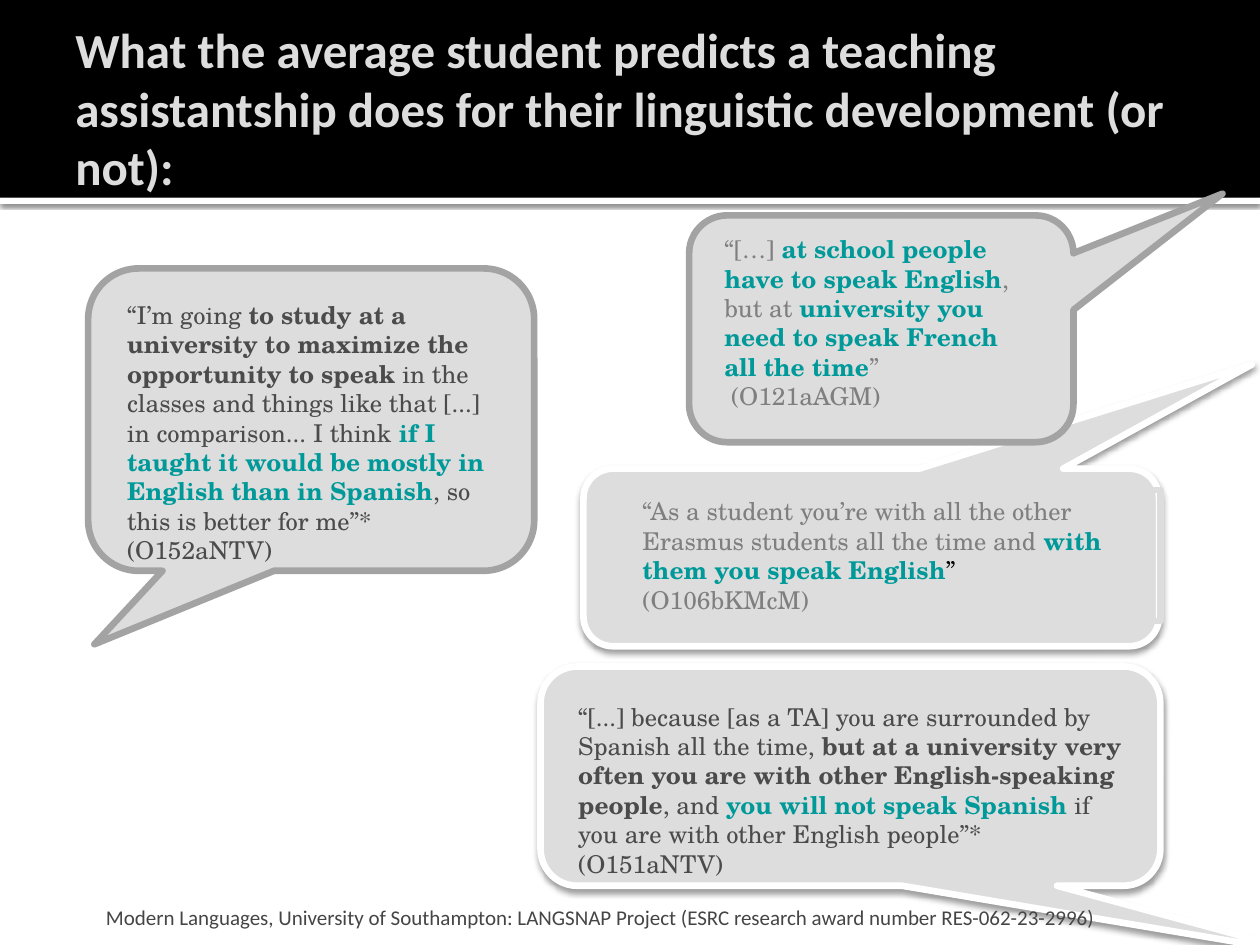
import pptx
import pptx.util
import pptx.dml.color
import pptx.enum.shapes
import pptx.enum.text
import pptx.oxml
import pptx.oxml.ns

Pt = pptx.util.Pt
KINDS = pptx.enum.shapes.MSO_SHAPE
ANCHOR = pptx.enum.text.MSO_ANCHOR

THEME = {
    "white": "FFFFFF", "black": "000000", "pale": "DDDDDD", "edge": "A3A3A3",
    "dark": "4B4B4B", "grey": "7F7F7F", "teal": "009999", "foot": "454545",
    "sans": "Calibri", "serif": "TeX Gyre Schola",
    "title": 28, "quote": 14, "note": 12, "line": 3.8,
}

TITLE = ("What the average student predicts a teaching assistantship does "
         "for their linguistic development (or not):")
FOOTER = ("Modern Languages, University of Southampton: LANGSNAP Project "
          "(ESRC research award number RES-062-23-2996)")

# Boxes are left, top, width, height in points.
# Each run is text, colour and, where bold, True.
QUOTES = [
    {"bubble": (308.9, 380.9, 354.2, 125.3), "tip": (0.738, 0.811),
     "edge": "white", "box": (323.3, 397.4, 325.4, 92.2), "frame": False,
     "text": [[
         ("“[...] because [as a TA] you are surrounded by Spanish all the time, ", "dark"),
         ("but at a university very often you are with other "
          "English-speaking people", "dark", True),
         (", and ", "dark"),
         ("you will not speak Spanish", "teal", True),
         (" if you are with other English people”* (O151aNTV)", "dark")]]},
    {"bubble": (333.4, 267.8, 329, 101.5), "tip": (0.661, -1.086),
     "edge": "white", "box": (360, 280.1, 303.1, 74.9), "frame": True,
     "text": [[
         ("“As a student you’re with all the other Erasmus students "
          "all the time and ", "grey"),
         ("with them you speak English", "teal", True),
         ("”", "black")],
         [("(O106bKMcM)", "grey")]]},
    {"bubble": (50.4, 153.4, 254.9, 172.8), "tip": (-0.486, 0.743),
     "edge": "edge", "box": (65.5, 167.8, 231.1, 143.3), "frame": False,
     "text": [[
         ("“I’m going ", "dark"),
         ("to study at a university to maximize the opportunity to speak", "dark", True),
         (" in the classes and things like that [...] in comparison... I think", "dark"),
         (" if I taught it would be mostly in English than in Spanish", "teal", True),
         (", so this is better for me”* (O152aNTV)", "dark")]]},
    {"bubble": (393.8, 123.1, 219.6, 129.6), "tip": (0.888, -0.596),
     "edge": "edge", "box": (406.8, 130.3, 190.1, 108.7), "frame": True,
     "text": [[
         ("“[…] ", "grey"),
         ("at school people have to speak English", "teal", True),
         (", but at ", "grey"),
         ("university you need to speak French all the time", "teal", True),
         ("”", "grey")],
         [(" (O121aAGM)", "grey")]]},
]


def tint(name):
    return pptx.dml.color.RGBColor.from_string(THEME[name])


def cast(shape, blur, gap, alpha):
    """Give the shape a black shadow that falls straight down."""
    shape.shadow.inherit = False
    effects = shape._element.spPr.find(pptx.oxml.ns.qn("a:effectLst"))
    effects.append(pptx.oxml.parse_xml(
        f'<a:outerShdw {pptx.oxml.ns.nsdecls("a")} blurRad="{Pt(blur)}" '
        f'dist="{Pt(gap)}" dir="5400000" algn="ctr" rotWithShape="0">'
        f'<a:srgbClr val="{THEME["black"]}"><a:alpha val="{alpha * 1000}"/>'
        '</a:srgbClr></a:outerShdw>'))


def add_form(slide, kind, box, fill, edge=None):
    shape = slide.shapes.add_shape(kind, *map(Pt, box))
    shape.shadow.inherit = False
    shape.fill.solid()
    shape.fill.fore_color.rgb = tint(fill)
    if edge:
        shape.line.color.rgb = tint(edge)
        shape.line.width = Pt(THEME["line"])
    else:
        shape.line.fill.background()
    return shape


def add_text(slide, box, paras, font, size, insets=(7.2, 3.6, 7.2, 3.6),
             anchor=ANCHOR.TOP):
    shape = slide.shapes.add_textbox(*map(Pt, box))
    frame = shape.text_frame
    frame.word_wrap = True
    frame.vertical_anchor = anchor
    (frame.margin_left, frame.margin_top,
     frame.margin_right, frame.margin_bottom) = map(Pt, insets)
    for i, runs in enumerate(paras):
        para = frame.add_paragraph() if i else frame.paragraphs[0]
        para.font.name = THEME[font]
        para.font.size = Pt(THEME[size])
        for text, tone, *bold in runs:
            run = para.add_run()
            run.text = text
            run.font.color.rgb = tint(tone)
            run.font.bold = bool(bold)
    return shape


def add_bubble(slide, quote):
    shape = add_form(slide, KINDS.ROUNDED_RECTANGULAR_CALLOUT,
                     quote["bubble"], "pale", quote["edge"])
    for i, value in enumerate((*quote["tip"], 0.167)):
        shape.adjustments[i] = value
    if quote["edge"] == "white":
        cast(shape, 3.5, 2, 38)


def add_quote(slide, quote):
    shape = add_text(slide, quote["box"], quote["text"], "serif", "quote")
    if quote["frame"]:
        shape.line.color.rgb = tint("pale")
        shape.line.width = Pt(THEME["line"])


def main():
    deck = pptx.Presentation()
    deck.slide_width, deck.slide_height = Pt(720), Pt(540)
    slide = deck.slides.add_slide(deck.slide_layouts[6])

    strip = add_form(slide, KINDS.RECTANGLE, (0, 113, 720, 3.6), "white")
    cast(strip, 2.5, 0.8, 60)
    add_form(slide, KINDS.RECTANGLE, (0, 0, 720, 113), "black")

    for quote in QUOTES:
        add_bubble(slide, quote)
    add_text(slide, (36, 12.2, 648, 98.6), [[(TITLE, "pale", True)]],
             "sans", "title", (7.2, 3.6, 3.6, 3.6), ANCHOR.MIDDLE)
    add_text(slide, (56.9, 508.3, 605.5, 23), [[(FOOTER, "foot")]],
             "sans", "note", (3.6, 3.6, 3.6, 0), ANCHOR.BOTTOM)
    for quote in QUOTES:
        add_quote(slide, quote)

    deck.save("out.pptx")


if __name__ == "__main__":
    main()
